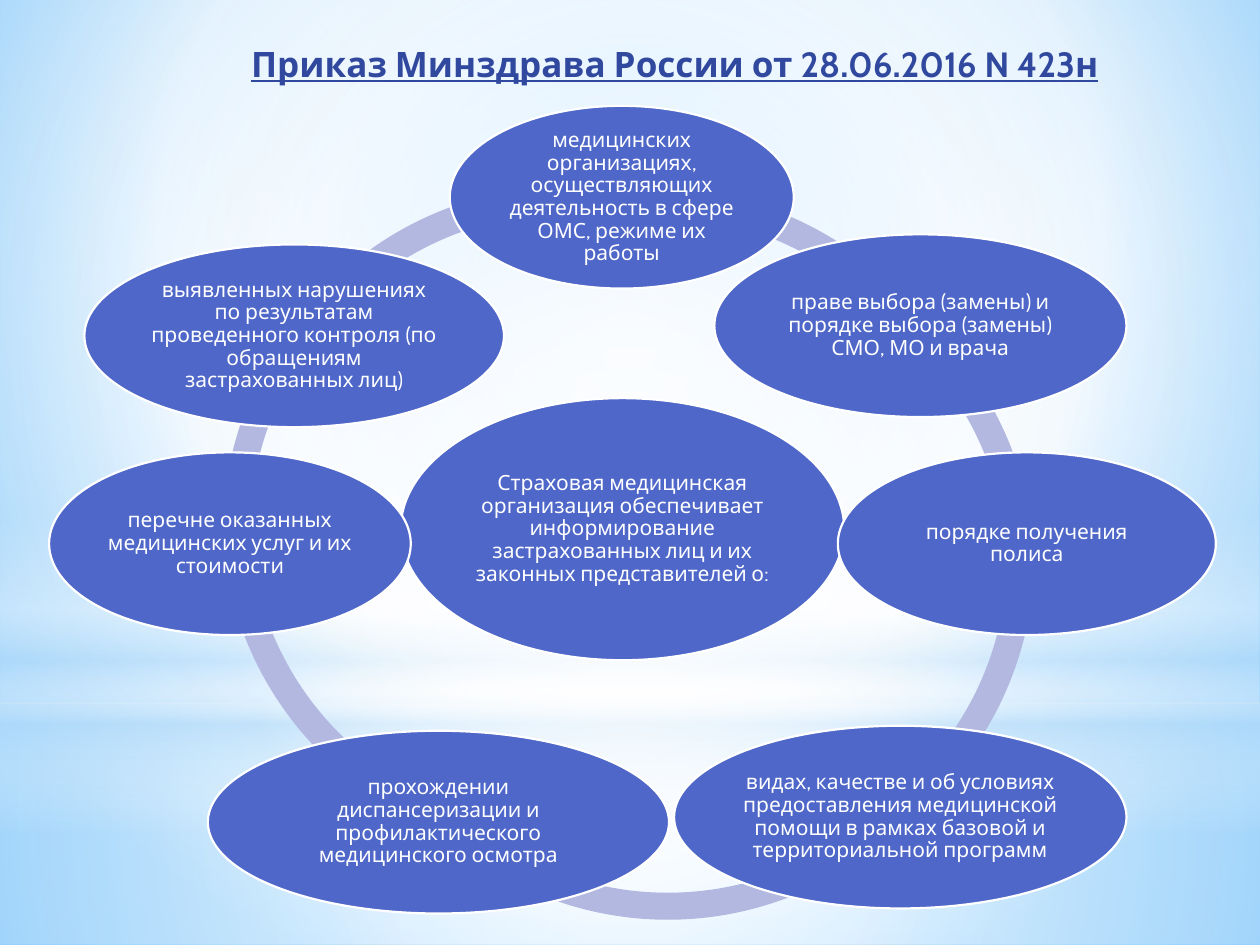
"""Builds a one-slide ring diagram on what an insurer tells insured people."""
from lxml.etree import fromstring
from pptx import Presentation
from pptx.dml.color import RGBColor
from pptx.enum.shapes import MSO_SHAPE
from pptx.enum.text import MSO_ANCHOR, PP_ALIGN
from pptx.oxml.ns import qn
from pptx.util import Inches, Pt

THEME = dict(font="Cabin", title="31489F", node="4E67C8", arc="B2B8E0",
             white="FFFFFF", sky="B4DCFA", title_size=20, node_size=12, line=1.25)
WHITE, SKY = THEME["white"], THEME["sky"]

prs = Presentation()
prs.slide_width, prs.slide_height = Inches(10), Inches(7.5)
s = prs.slides.add_slide(prs.slide_layouts[6])
COL, ROW = prs.slide_width / 100, prs.slide_height / 75


def gradient(fill, element, stops, focus=None):
    fill.gradient()
    old = next(element.iter(qn("a:gradFill")))
    gs = "".join(f'<a:gs pos="{pos * 1000}"><a:srgbClr val="{color}">'
                 f'<a:alpha val="{alpha * 1000}"/></a:srgbClr></a:gs>'
                 for pos, color, alpha in stops)
    if focus:
        sides = " ".join(f'{k}="{v * 1000}"' for k, v in zip("ltrb", focus))
        shade = f'<a:path path="circle"><a:fillToRect {sides}/></a:path>'
    else:
        shade = '<a:lin ang="5400000" scaled="0"/>'
    old.getparent().replace(old, fromstring(
        '<a:gradFill xmlns:a="http://schemas.openxmlformats.org/drawingml/2006/main" '
        f'rotWithShape="1"><a:gsLst>{gs}</a:gsLst>{shade}</a:gradFill>'))


def add_shape(kind, x, y, w, h, color=None):
    sp = s.shapes.add_shape(kind, int(x * COL), int(y * ROW), int(w * COL), int(h * ROW))
    sp.shadow.inherit = False
    sp.line.fill.background()
    if color:
        sp.fill.solid()
        sp.fill.fore_color.rgb = RGBColor.from_string(color)
    return sp


gradient(s.background.fill, s._element,
         [(0, "9ED5FF", 100), (60, WHITE, 100), (100, "5BB9FF", 100)], (20, 10, 20, 60))

center = (50, 50, 50, 50)
layers = [
    (MSO_SHAPE.RECTANGLE, 55.8, 19.2, [(0, WHITE, 91), (37, WHITE, 76), (100, SKY, 79)], center),
    (MSO_SHAPE.RECTANGLE, 0, 55.8, [(0, WHITE, 89), (48, WHITE, 62), (100, SKY, 79)], center),
    (MSO_SHAPE.RECTANGLE, 41.2, 25, [(0, WHITE, 0), (29, WHITE, 30), (45, SKY, 40),
                                     (55, WHITE, 26), (65, SKY, 60), (100, WHITE, 0)], None),
    (MSO_SHAPE.OVAL, 17.5, 55.8, [(0, WHITE, 100), (56, WHITE, 0)], center),
]
for kind, y, h, stops, focus in layers:
    sp = add_shape(kind, 0, y, 100, h)
    gradient(sp.fill, sp._element, stops, focus)

tb = s.shapes.add_textbox(int(13.8 * COL), int(2.9 * ROW), int(79.5 * COL), int(4.4 * ROW))
tf = tb.text_frame
tf.word_wrap = True
tf.text = "Приказ Минздрава России от 28.06.2016 N 423н"
p = tf.paragraphs[0]
p.alignment = PP_ALIGN.CENTER
font = p.runs[0].font
font.name, font.size = THEME["font"], Pt(THEME["title_size"])
font.bold = font.underline = True
font.color.rgb = RGBColor.from_string(THEME["title"])

arcs = [
    (18.2, 14.8, 128.75, 167.81),
    (17.7, 15.4, 106.7, 129.75),
    (17.6, 14, 66.85, 104.82),
    (26.2, 19.4, 27.17, 80.16),
    (28.5, 17.3, 214.73, 31.21),
    (28.5, 18.5, 187.34, 213.2),
    (25.3, 15, 158.43, 193.6),
]
for x, y, start, end in arcs:
    sp = add_shape(MSO_SHAPE.BLOCK_ARC, x, y, 53.6, 53.6, THEME["arc"])
    for i, value in enumerate((start, end, 0.04)):
        sp.adjustments[i] = value

NODE_H = 14.5
nodes = [
    (31.8, 31.6, 35.2, 20.8, "Страховая медицинская организация обеспечивает информирование "
     "застрахованных лиц и их законных представителей о:"),
    (35.7, 8.4, 27.3, NODE_H, "медицинских организациях, осуществляющих деятельность в сфере "
     "ОМС, режиме их работы"),
    (56.7, 18.6, 32.7, NODE_H, "праве выбора (замены) и порядке выбора (замены) СМО, МО и врача"),
    (66.5, 35.9, 30, NODE_H, "порядке получения полиса"),
    (53.5, 57.6, 35.9, NODE_H, "видах, качестве и об условиях предоставления медицинской "
     "помощи в рамках базовой и территориальной программ"),
    (16.5, 58, 36.6, NODE_H, "прохождении диспансеризации и профилактического "
     "медицинского осмотра"),
    (3.9, 35.9, 28.7, NODE_H, "перечне оказанных медицинских услуг и их стоимости"),
    (6.7, 19.4, 33.3, NODE_H, "выявленных нарушениях по результатам проведенного контроля "
     "(по обращениям застрахованных лиц)"),
]
for x, y, w, h, text in nodes:
    sp = add_shape(MSO_SHAPE.OVAL, x, y, w, h, THEME["node"])
    sp.line.color.rgb = RGBColor.from_string(WHITE)
    sp.line.width = Pt(THEME["line"])
    tf = sp.text_frame
    tf.word_wrap = True
    tf.vertical_anchor = MSO_ANCHOR.MIDDLE
    tf.margin_left = tf.margin_right = tf.margin_top = tf.margin_bottom = Inches(0.02)
    tf.text = text
    p = tf.paragraphs[0]
    p.alignment, p.line_spacing = PP_ALIGN.CENTER, 0.9
    font = p.runs[0].font
    font.name, font.size = THEME["font"], Pt(THEME["node_size"])
    font.color.rgb = RGBColor.from_string(WHITE)

prs.save("out.pptx")
